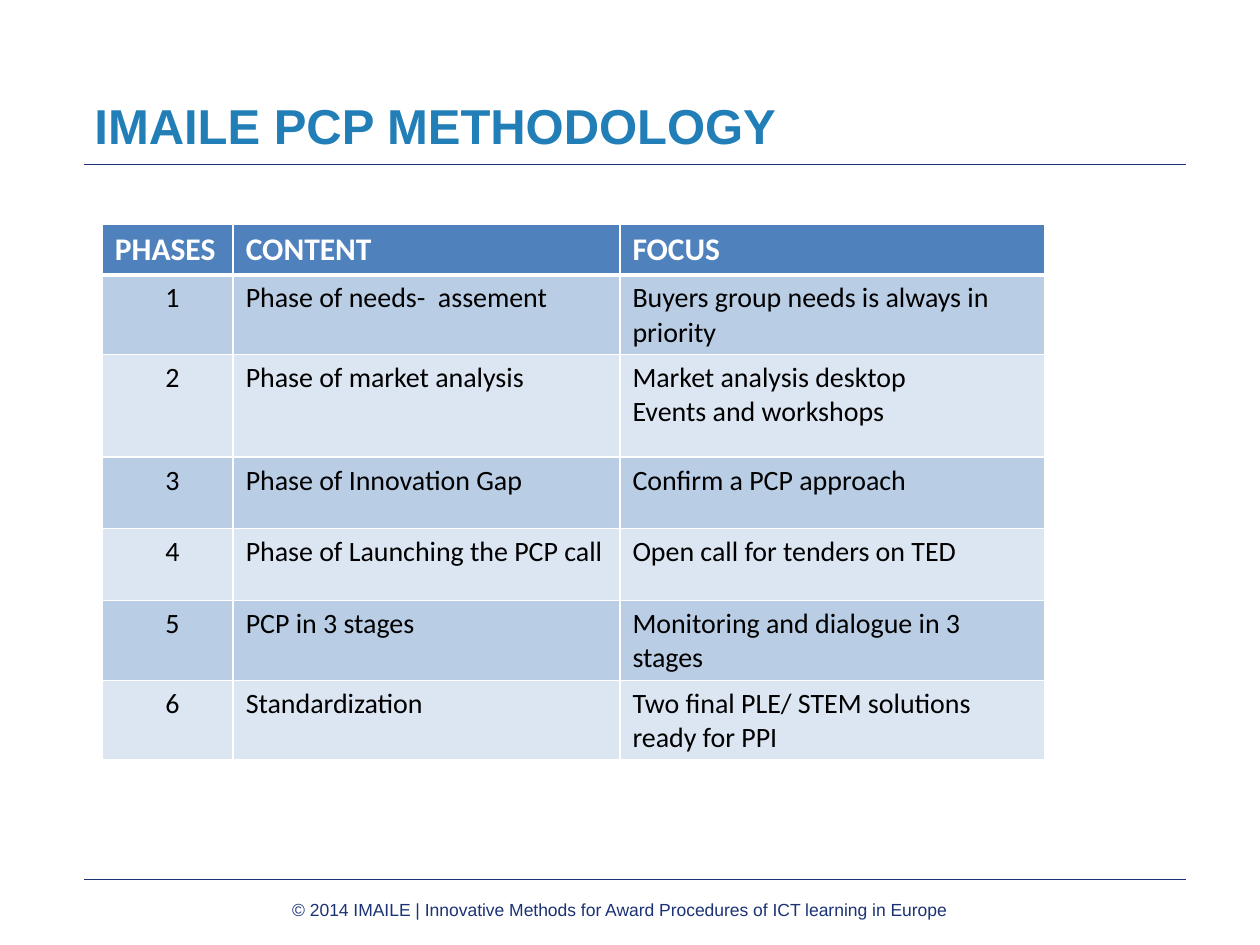
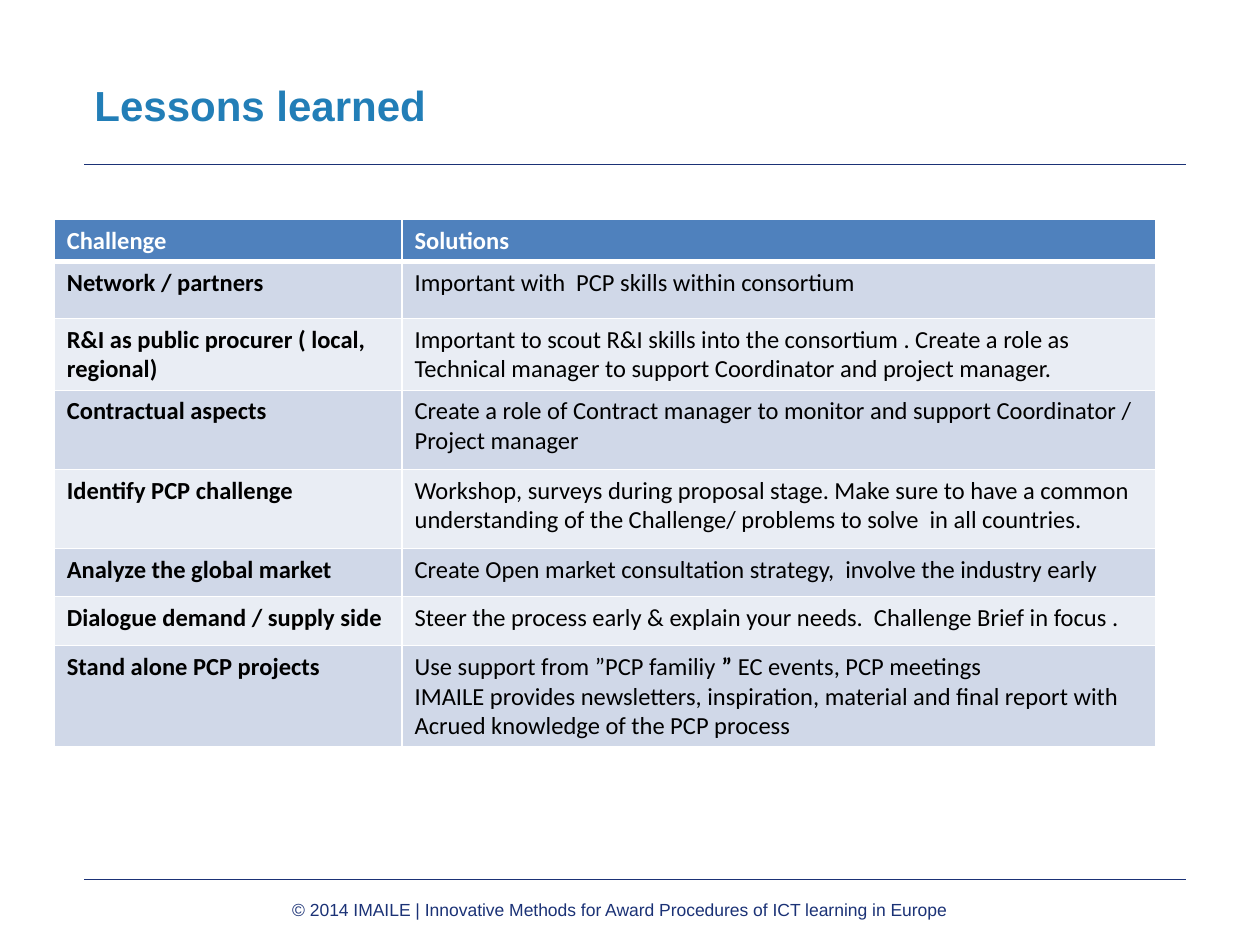
from dataclasses import dataclass
from lxml.etree import SubElement
from pptx import Presentation
from pptx.dml.color import RGBColor
from pptx.enum.shapes import MSO_CONNECTOR
from pptx.enum.text import MSO_AUTO_SIZE
from pptx.oxml.ns import qn
from pptx.util import Pt

COLORS = {
    "navy": "1B3276", "title": "227EB7", "header": "4F81BD",
    "white": "FFFFFF", "black": "000000",
    "blue_dark": "B9CDE5", "blue_light": "DCE6F2",
    "grey_dark": "D0D8E8", "grey_light": "E9EDF4",
}
RULE_LEFT, RULE_RIGHT = 48.25, 677.5
RULE_TOPS = (94.25, 502.5)
FOOTER = "© 2014 IMAILE | Innovative Methods for Award Procedures of ICT learning in Europe"
BORDER_SIDES = ("L", "R", "T", "B")


@dataclass(frozen=True)
class TextStyle:
    size: float
    font: str
    color: str
    bold: bool = False


@dataclass(frozen=True)
class Label:
    text: str
    left: float
    top: float
    width: float
    height: float
    style: TextStyle


@dataclass(frozen=True)
class Grid:
    left: float
    top: float
    widths: tuple
    heights: tuple
    rows: tuple
    bands: tuple
    header_size: float
    body_size: float
    bold_first: bool = False
    first_margin: float = 7.2


@dataclass(frozen=True)
class Page:
    title: Label
    grid: Grid


FOOTER_LABEL = Label(FOOTER, 167, 514, 487.5, 12, TextStyle(10, "Arial", "navy"))

PAGES = (
    Page(
        Label("IMAILE PCP METHODOLOGY", 54, 54.75, 429, 34,
              TextStyle(28, "Arial", "title", True)),
        Grid(58.5, 128.25, (74.75, 221, 242.75),
             (28.5, 45.5, 58.5, 41, 41, 45.5, 45.5),
             (("PHASES", "CONTENT", "FOCUS"),
              ("1", "Phase of needs-  assement", "Buyers group needs is always in priority"),
              ("2", "Phase of market analysis", "Market analysis desktop\nEvents and workshops"),
              ("3", "Phase of Innovation Gap", "Confirm a PCP approach"),
              ("4", "Phase of Launching the PCP call", "Open call for tenders on TED"),
              ("5", "PCP in 3 stages", "Monitoring and dialogue in 3 stages"),
              ("6", "Standardization", "Two final PLE/ STEM solutions ready for PPI")),
             ("blue_dark", "blue_light"), 18, 16, first_margin=36),
    ),
    Page(
        Label("Lessons learned", 54, 45.5, 446.5, 29,
              TextStyle(24, "Arial", "title", True)),
        Grid(31, 125.5, (198.75, 430.5),
             (24, 32.5, 41, 45.25, 45.25, 27.5, 28, 57),
             (("Challenge", "Solutions"),
              ("Network / partners", "Important with  PCP skills within consortium"),
              ("R&I as public procurer ( local, regional)",
               "Important to scout R&I skills into the consortium . Create a role as "
               "Technical manager to support Coordinator and project manager."),
              ("Contractual aspects",
               "Create a role of Contract manager to monitor and support Coordinator / "
               "Project manager"),
              ("Identify PCP challenge",
               "Workshop, surveys during proposal stage. Make sure to have a common "
               "understanding of the Challenge/ problems to solve  in all countries."),
              ("Analyze the global market",
               "Create Open market consultation strategy,  involve the industry early"),
              ("Dialogue demand / supply side",
               "Steer the process early & explain your needs.  Challenge Brief in focus ."),
              ("Stand alone PCP projects",
               "Use support from ”PCP familiy *” *EC events, PCP meetings\n"
               "IMAILE provides newsletters, inspiration, material and final report with "
               "Acrued knowledge of the PCP process")),
             ("grey_dark", "grey_light"), 14, 14, bold_first=True),
    ),
)


def rgb(name: str) -> RGBColor:
    return RGBColor.from_string(COLORS[name])


def write(tf, text: str, style: TextStyle) -> None:
    for i, line in enumerate(text.split("\n")):
        p = tf.add_paragraph() if i else tf.paragraphs[0]
        for j, part in enumerate(line.split("*")):
            r = p.add_run()
            r.text = part
            formats = {"size": Pt(style.size), "name": style.font,
                       "bold": style.bold or j % 2 == 1}
            for key, value in formats.items():
                setattr(r.font, key, value)
            r.font.color.rgb = rgb(style.color)


def add_label(s, label: Label) -> None:
    sp = s.shapes.add_textbox(Pt(label.left), Pt(label.top), Pt(label.width), Pt(label.height))
    tf = sp.text_frame
    formats = {"word_wrap": True, "auto_size": MSO_AUTO_SIZE.SHAPE_TO_FIT_TEXT,
               "margin_left": 0, "margin_right": 0, "margin_top": 0, "margin_bottom": 0}
    for key, value in formats.items():
        setattr(tf, key, value)
    write(tf, label.text, label.style)


def add_rule(s, top: float) -> None:
    line = s.shapes.add_connector(MSO_CONNECTOR.STRAIGHT, Pt(RULE_LEFT), Pt(top),
                                  Pt(RULE_RIGHT), Pt(top))
    line.line.color.rgb = rgb("navy")
    line.line.width = Pt(0.5)
    SubElement(line._element.spPr, qn("a:effectLst"))


def add_borders(cell, row: int) -> None:
    tc_pr = cell._tc.get_or_add_tcPr()
    for side in BORDER_SIDES:
        thick = (row, side) in ((0, "B"), (1, "T"))
        ln = SubElement(tc_pr, qn(f"a:ln{side}"), w=str(Pt(3 if thick else 1)))
        fill = SubElement(ln, qn("a:solidFill"))
        SubElement(fill, qn("a:srgbClr"), val=COLORS["white"])


def add_grid(s, grid: Grid) -> None:
    table = s.shapes.add_table(len(grid.rows), len(grid.widths), Pt(grid.left), Pt(grid.top),
                               Pt(sum(grid.widths)), Pt(sum(grid.heights))).table
    table.horz_banding = False
    for column, width in zip(table.columns, grid.widths):
        column.width = Pt(width)
    for i, (height, texts) in enumerate(zip(grid.heights, grid.rows)):
        table.rows[i].height = Pt(height)
        for j, text in enumerate(texts):
            cell = table.cell(i, j)
            add_borders(cell, i)
            cell.fill.solid()
            cell.fill.fore_color.rgb = rgb(grid.bands[(i - 1) % 2] if i else "header")
            if i and j == 0:
                cell.margin_left = Pt(grid.first_margin)
            style = (TextStyle(grid.body_size, "Calibri", "black", grid.bold_first and j == 0)
                     if i else TextStyle(grid.header_size, "Calibri", "white", True))
            write(cell.text_frame, text, style)


def add_page(prs, page: Page) -> None:
    s = prs.slides.add_slide(prs.slide_layouts[6])
    for top in RULE_TOPS:
        add_rule(s, top)
    add_label(s, FOOTER_LABEL)
    add_label(s, page.title)
    add_grid(s, page.grid)


def main() -> None:
    prs = Presentation()
    prs.slide_width, prs.slide_height = Pt(720), Pt(540)
    for page in PAGES:
        add_page(prs, page)
    prs.save("out.pptx")


if __name__ == "__main__":
    main()
